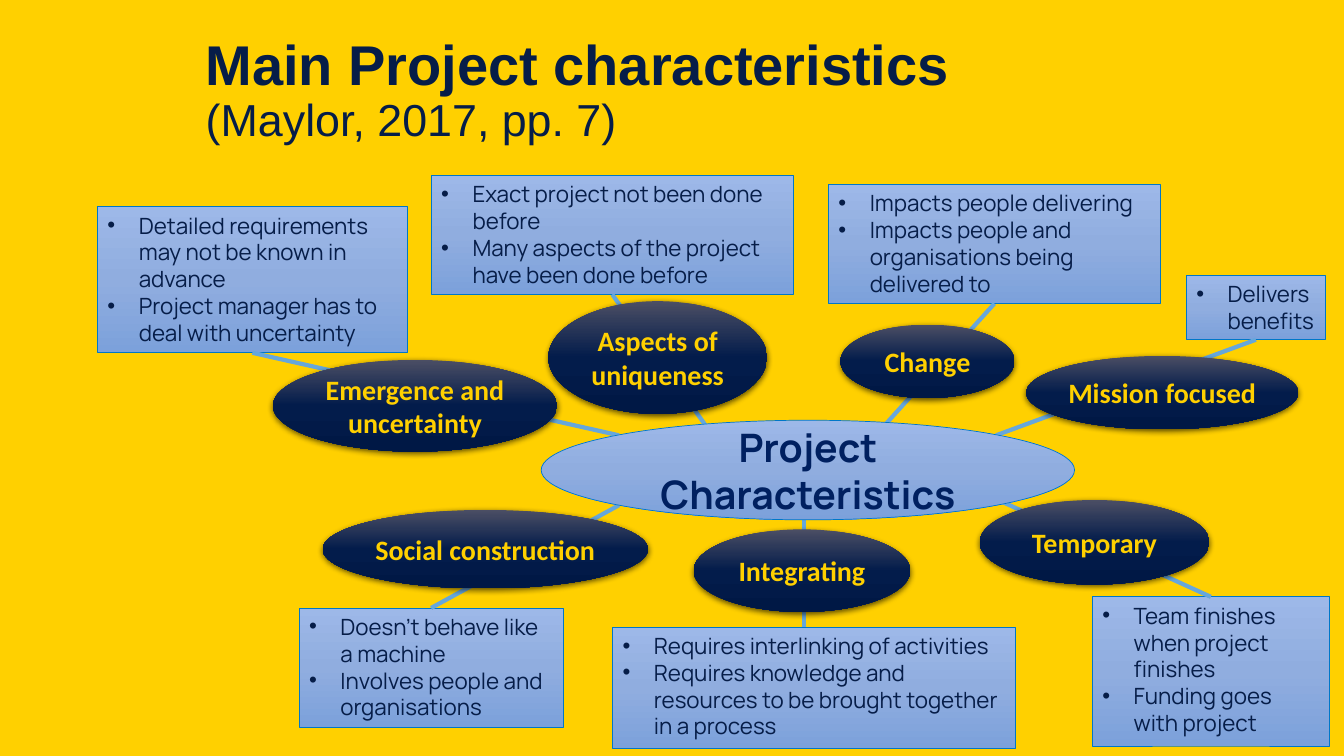
"""Build the project characteristics mind map slide."""
import copy
import dataclasses

import lxml.etree
import pptx
import pptx.dml.color
import pptx.enum.shapes
import pptx.enum.text
import pptx.oxml.ns
import pptx.util

Cm = pptx.util.Cm
Pt = pptx.util.Pt
RGBColor = pptx.dml.color.RGBColor
MSO_SHAPE = pptx.enum.shapes.MSO_SHAPE
MSO_ANCHOR = pptx.enum.text.MSO_ANCHOR
PP_ALIGN = pptx.enum.text.PP_ALIGN
qn = pptx.oxml.ns.qn

YELLOW = RGBColor(0xFF, 0xD0, 0x00)
NAVY = RGBColor(0x06, 0x1D, 0x48)
HUB_NAVY = RGBColor(0x00, 0x20, 0x60)
OUTLINE = RGBColor(0x00, 0x77, 0xC8)
SPOKE = RGBColor(0x66, 0xA7, 0xDB)
LIGHT = (RGBColor(0x9D, 0xB8, 0xE8), RGBColor(0x90, 0xAD, 0xDF), RGBColor(0x7C, 0xA1, 0xDB))
DARK = (RGBColor(0x4B, 0x4E, 0x64), RGBColor(0x03, 0x1C, 0x4B), RGBColor(0x00, 0x18, 0x45))

TITLE_BOX = (4.93, 0.46, 24.94, 3.68)
HUB_BOX = (13.64, 10.59, 13.44, 2.51)


@dataclasses.dataclass
class Branch:
    """One characteristic: its bubble, its notes and its place on the hub."""
    name: str
    bubble_box: tuple
    note_box: tuple
    hub_point: tuple
    notes: list
    wrap: bool = True
    side_inset: float = 0.25
    plumb: bool = False


BRANCHES = [
    Branch("Aspects of uniqueness", (13.82, 7.59, 5.51, 2.84), (10.87, 4.42, 9.12, 3), (18.36, 11.53),
           ["Exact project not been done before", "Many aspects of the project have been done before"]),
    Branch("Mission focused", (25.86, 8.97, 6.86, 1.85), (29.9, 6.93, 3.5, 1.63), (25.1, 10.97),
           ["Delivers benefits"], wrap=False),
    Branch("Temporary", (24.69, 12.6, 5.79, 2.13), (27.53, 15.04, 5.97, 3.76), (24.87, 12.47),
           ["Team finishes when project finishes", "Funding goes with project"]),
    Branch("Change", (21.18, 8.18, 4.39, 1.85), (20.88, 4.65, 8.36, 3), (21.56, 11.53),
           ["Impacts people delivering", "Impacts people and organisations being delivered to"]),
    Branch("Integrating", (17.48, 13.34, 5.46, 2.08), (15.44, 15.8, 10.16, 3.07), (20.27, 12.73),
           ["Requires interlinking of activities",
            "Requires knowledge and resources to be brought together in a process"], plumb=True),
    Branch("Social construction", (8.13, 12.85, 8.2, 1.98), (7.54, 15.32, 6.65, 3), (15.6, 12.73),
           ["Doesn’t behave like a machine", "Involves people and organisations"], wrap=False),
    Branch("Emergence and uncertainty", (6.88, 9.07, 7.16, 2.31), (2.46, 5.21, 7.8, 3.68), (15.6, 10.97),
           ["Detailed requirements may not be known in advance",
            "Project manager has to deal with uncertainty"], side_inset=0.1),
]


def lengths(values):
    """Turn centimetre values into lengths."""
    return [Cm(value) for value in values]


def format_run(run, font_name, size, color, bold=False):
    """Set the look of one run."""
    run.font.name = font_name
    run.font.size = Pt(size)
    run.font.color.rgb = color
    run.font.bold = bold


def add_panel(shapes, preset, box, colors, outline=None):
    """Add a shape with a three-stop gradient running downwards."""
    panel = shapes.add_shape(preset, *lengths(box))
    panel.shadow.inherit = False
    panel.fill.gradient()
    panel.fill.gradient_angle = 270
    first_stop = panel._element.spPr.find(".//" + qn("a:gs"))
    first_stop.addnext(copy.deepcopy(first_stop))
    for stop, color, position in zip(panel.fill.gradient_stops, colors, (0, 0.5, 1)):
        stop.color.rgb = color
        stop.position = position
    if outline is None:
        panel.line.fill.background()
    else:
        panel.line.color.rgb = outline
        panel.line.width = Pt(0.5)
    return panel


def add_label(panel, text, font_name, size, color, side_inset):
    """Write one bold centred label in a panel."""
    frame = panel.text_frame
    frame.text = text
    frame.word_wrap = True
    frame.vertical_anchor = MSO_ANCHOR.MIDDLE
    frame.margin_left = frame.margin_right = Cm(side_inset)
    label = frame.paragraphs[0]
    label.alignment = PP_ALIGN.CENTER
    format_run(label.runs[0], font_name, size, color, bold=True)


def add_drop_shadow(panel):
    """Give a panel a soft shadow just below it."""
    effects = panel._element.spPr.find(qn("a:effectLst"))
    shadow = lxml.etree.SubElement(effects, qn("a:outerShdw"), blurRad=str(Pt(4.5)),
                                   dist=str(Pt(1.5)), dir="5400000", rotWithShape="0")
    black = lxml.etree.SubElement(shadow, qn("a:srgbClr"), val="000000")
    lxml.etree.SubElement(black, qn("a:alpha"), val="63000")


def add_note(shapes, box, notes):
    """Add a box with a bulleted list."""
    note = add_panel(shapes, MSO_SHAPE.RECTANGLE, box, LIGHT, OUTLINE)
    frame = note.text_frame
    frame.text = "\n".join(notes)
    frame.word_wrap = True
    frame.vertical_anchor = MSO_ANCHOR.TOP
    frame.auto_size = pptx.enum.text.MSO_AUTO_SIZE.SHAPE_TO_FIT_TEXT
    for item in frame.paragraphs:
        item.alignment = PP_ALIGN.LEFT
        properties = item._p.get_or_add_pPr()
        properties.set("marL", str(Cm(0.79)))
        properties.set("indent", str(Cm(-0.79)))
        lxml.etree.SubElement(properties, qn("a:buFont"), typeface="Arial")
        lxml.etree.SubElement(properties, qn("a:buChar"), char="•")
        format_run(item.runs[0], "Manrope", 16, NAVY)
    return note


def add_spoke(shapes, branch, note):
    """Draw the line from the hub to a note."""
    x, y = lengths(branch.hub_point)
    spoke = shapes.add_connector(pptx.enum.shapes.MSO_CONNECTOR.STRAIGHT, x, y, x, note.top)
    if not branch.plumb:
        spoke.end_connect(note, 2 if note.top < y else 0)
    spoke.line.color.rgb = SPOKE
    spoke.line.width = Pt(3)
    lxml.etree.SubElement(spoke._element.spPr, qn("a:effectLst"))


def add_branch(slide, branch):
    """Add one group of note, spoke and bubble."""
    shapes = slide.shapes.add_group_shape().shapes
    note = add_note(shapes, branch.note_box, branch.notes)
    add_spoke(shapes, branch, note)
    bubble = add_panel(shapes, MSO_SHAPE.OVAL, branch.bubble_box, DARK)
    add_drop_shadow(bubble)
    add_label(bubble, branch.name, "Calibri", 20, YELLOW, branch.side_inset)
    bubble.text_frame.word_wrap = branch.wrap


def add_title(slide):
    """Fill the title placeholder with the heading and its citation."""
    title = slide.shapes.title
    title.left, title.top, title.width, title.height = lengths(TITLE_BOX)
    frame = title.text_frame
    frame.auto_size = pptx.enum.text.MSO_AUTO_SIZE.NONE
    frame.vertical_anchor = MSO_ANCHOR.MIDDLE
    heading = frame.paragraphs[0]
    heading.text = "Main Project characteristics\v(Maylor, 2017, pp. 7)"
    heading.alignment = PP_ALIGN.LEFT
    heading.line_spacing = 0.9
    name, citation = heading.runs
    format_run(name, "Arial", 40, NAVY, bold=True)
    format_run(citation, "Arial", 32, NAVY)
    line_break = heading._p.find(qn("a:br"))
    line_break.append(copy.deepcopy(name._r.find(qn("a:rPr"))))


def main():
    """Build and save the slide."""
    deck = pptx.Presentation()
    deck.slide_width, deck.slide_height = lengths((33.87, 19.05))
    slide = deck.slides.add_slide(deck.slide_layouts[5])
    slide.background.fill.solid()
    slide.background.fill.fore_color.rgb = YELLOW
    add_title(slide)
    for branch in BRANCHES:
        add_branch(slide, branch)
    hub = add_panel(slide.shapes, MSO_SHAPE.OVAL, HUB_BOX, LIGHT, OUTLINE)
    add_label(hub, "Project Characteristics", "Manrope", 28, HUB_NAVY, 0.1)
    deck.save("out.pptx")


if __name__ == "__main__":
    main()
